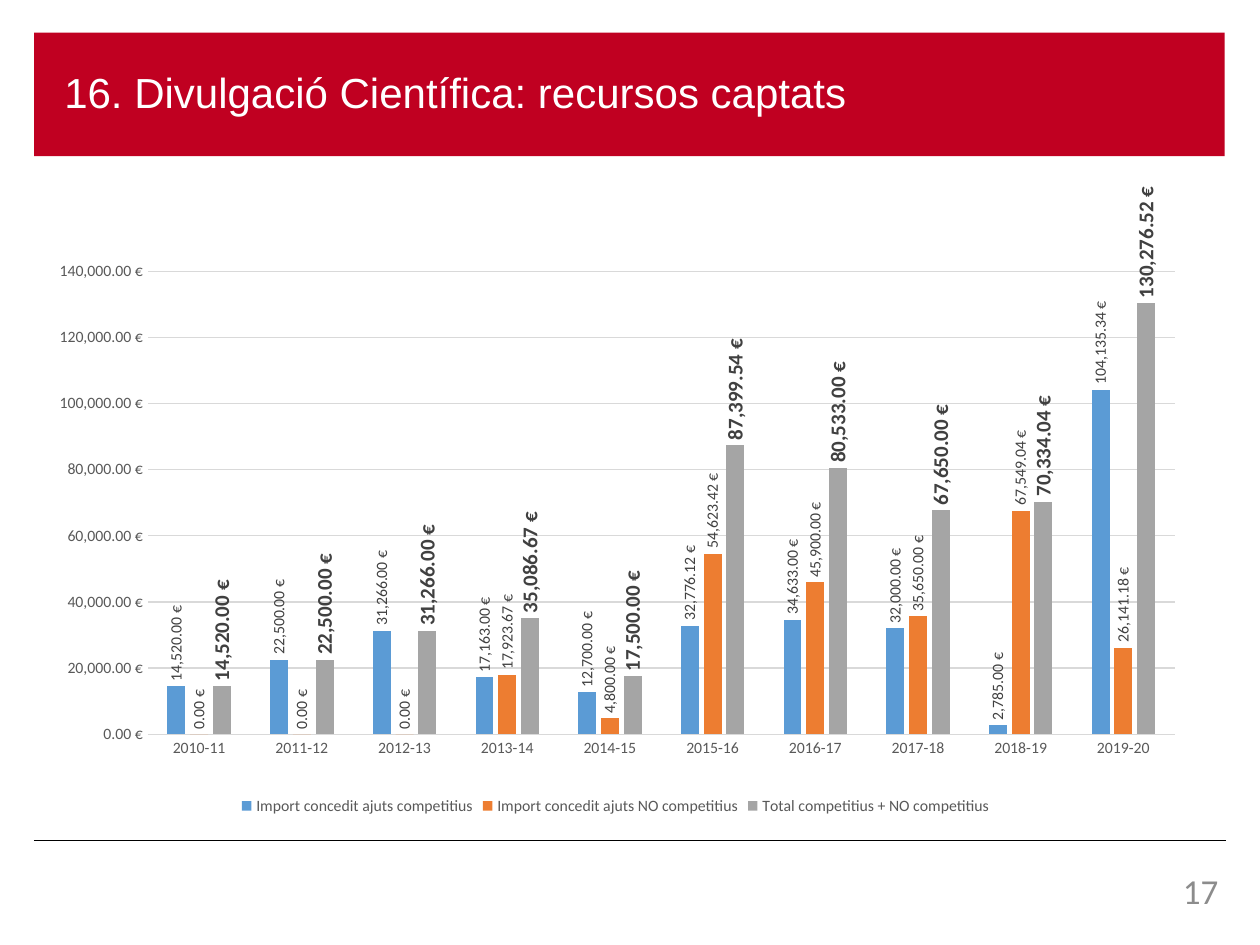
from lxml.etree import SubElement
from pptx import Presentation
from pptx.chart.data import CategoryChartData as ChartData
from pptx.dml.color import RGBColor
from pptx.enum.chart import XL_CHART_TYPE as Kind, XL_LABEL_POSITION as Spot
from pptx.enum.chart import XL_LEGEND_POSITION as Side, XL_TICK_MARK as Tick
from pptx.enum.shapes import MSO_CONNECTOR as Conn
from pptx.enum.text import MSO_ANCHOR as Anchor, MSO_AUTO_SIZE as Fit, PP_ALIGN as Align
from pptx.oxml import parse_xml
from pptx.oxml.ns import nsdecls, qn
from pptx.util import Inches, Pt

EURO = '#,##0.00\\ "€"'
YEARS = ["2010-11", "2011-12", "2012-13", "2013-14", "2014-15",
         "2015-16", "2016-17", "2017-18", "2018-19", "2019-20"]
# name, bar colour, label size, label bold, values
SERIES = [
    ("Import concedit ajuts competitius", "5B9BD5", 9, False,
     [14520, 22500, 31266, 17163, 12700, 32776.12, 34633, 32000, 2785, 104135.34]),
    ("Import concedit ajuts NO competitius", "ED7D31", 9, False,
     [0, 0, 0, 17923.67, 4800, 54623.42, 45900, 35650, 67549.04, 26141.18]),
    ("Total competitius + NO competitius", "A5A5A5", 12, True,
     [14520, 22500, 31266, 35086.67, 17500, 87399.54, 80533, 67650, 70334.04, 130276.52]),
]
PLOT = {"x": 0.097, "y": 0.162, "w": 0.885, "h": 0.707}


def rgb(code):
    return RGBColor.from_string(code)


def assign(obj, **values):
    for key, value in values.items():
        setattr(obj, key, value)


def style(font, size, color, name="Calibri", bold=False):
    assign(font, size=Pt(size), name=name, bold=bold)
    font.color.rgb = rgb(color)


def stroke(line, color, width):
    line.color.rgb = rgb(color)
    line.width = Pt(width)


def place(shape, box):
    left, top, width, height = map(Inches, box)
    assign(shape, left=left, top=top, width=width, height=height)


def add_title(slide, box, text):
    title = slide.shapes.title
    place(title, box)
    title.fill.solid()
    title.fill.fore_color.rgb = rgb("C00021")
    frame = title.text_frame
    assign(frame, text=text, word_wrap=True, auto_size=Fit.NONE,
           vertical_anchor=Anchor.MIDDLE, margin_left=Inches(0.24),
           margin_right=Inches(0.1), margin_top=Inches(0.05),
           margin_bottom=Inches(0.05))
    para = frame.paragraphs[0]
    assign(para, alignment=Align.LEFT, line_spacing=0.9)
    style(para.runs[0].font, 24, "FFFFFF", "Arial")


def fix_plot(chart):
    """Pin the inner plot area to the fractions in PLOT."""
    area = chart._chartSpace.chart.plotArea
    for old in area.findall(qn("c:layout")):
        area.remove(old)
    layout = parse_xml(f"<c:layout {nsdecls('c')}><c:manualLayout/></c:layout>")
    manual = layout[0]
    marks = {"layoutTarget": "inner", "xMode": "edge", "yMode": "edge", **PLOT}
    for tag, value in marks.items():
        SubElement(manual, qn(f"c:{tag}")).set("val", str(value))
    area.insert(0, layout)


def format_axes(chart):
    cats, vals = chart.category_axis, chart.value_axis
    for axis in (cats, vals):
        assign(axis, major_tick_mark=Tick.NONE, minor_tick_mark=Tick.NONE)
        style(axis.tick_labels.font, 9, "595959")
    stroke(cats.format.line, "D9D9D9", 0.75)
    vals.format.line.fill.background()
    assign(vals, minimum_scale=0, maximum_scale=140000, major_unit=20000,
           has_major_gridlines=True)
    stroke(vals.major_gridlines.format.line, "D9D9D9", 0.75)
    assign(vals.tick_labels, number_format=EURO, number_format_is_linked=False)


def format_bars(series, color, size, bold):
    series.format.fill.solid()
    series.format.fill.fore_color.rgb = rgb(color)
    series.invert_if_negative = False
    labels = series.data_labels
    assign(labels, show_value=True, position=Spot.OUTSIDE_END,
           number_format=EURO, number_format_is_linked=False)
    style(labels.font, size, "404040", bold=bold)
    body = series._element.xpath("c:dLbls/c:txPr/a:bodyPr")[0]
    body.set("rot", "-5400000")
    body.set("vert", "horz")


def add_funds(slide, box):
    data = ChartData(number_format=EURO)
    data.categories = YEARS
    for name, *_, values in SERIES:
        data.add_series(name, values)
    chart = slide.shapes.add_chart(
        Kind.COLUMN_CLUSTERED, *map(Inches, box), data).chart
    assign(chart, has_title=False, has_legend=True)
    style(chart.font, 10, "000000")
    assign(chart.legend, position=Side.BOTTOM, include_in_layout=False)
    style(chart.legend.font, 9, "595959")
    plot = chart.plots[0]
    assign(plot, gap_width=219, overlap=-27, vary_by_categories=False)
    for series, (_, color, size, bold, _) in zip(plot.series, SERIES):
        format_bars(series, color, size, bold)
    format_axes(chart)
    fix_plot(chart)


def add_footer(slide, box, number):
    """Draw a rule along the top of the box and the page number at its right."""
    left, top, width, _ = box
    rule = slide.shapes.add_connector(
        Conn.STRAIGHT, *map(Inches, (left, top, left + width, top)))
    stroke(rule.line, "000000", 0.5)
    SubElement(rule._element.spPr, qn("a:effectLst"))
    spot = (left + width - 0.79, top + 0.23, 0.73, 0.4)
    frame = slide.shapes.add_textbox(*map(Inches, spot)).text_frame
    assign(frame, text=number, word_wrap=True, margin_left=0, margin_right=0,
           margin_top=0, margin_bottom=0)
    para = frame.paragraphs[0]
    para.alignment = Align.RIGHT
    style(para.runs[0].font, 20, "8C8C8C")


def main():
    deck = Presentation()
    assign(deck, slide_width=Inches(10), slide_height=Inches(7.5))
    slide = deck.slides.add_slide(deck.slide_layouts[5])
    add_title(slide, (0.27, 0.26, 9.45, 0.98),
              "16. Divulgació Científica: recursos captats")
    add_funds(slide, (0.28, 1.31, 9.21, 5.2))
    add_footer(slide, (0.27, 6.67, 9.46, 0.63), "17")
    deck.save("out.pptx")


if __name__ == "__main__":
    main()
